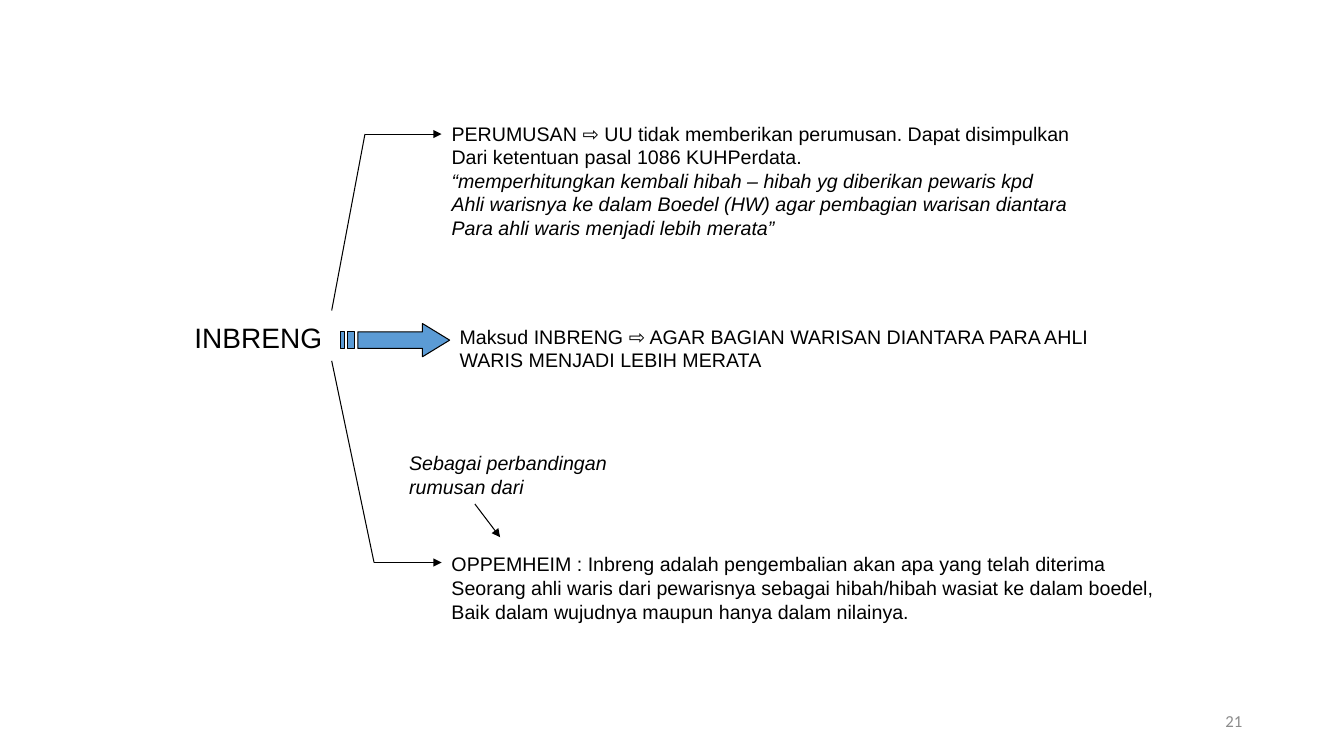
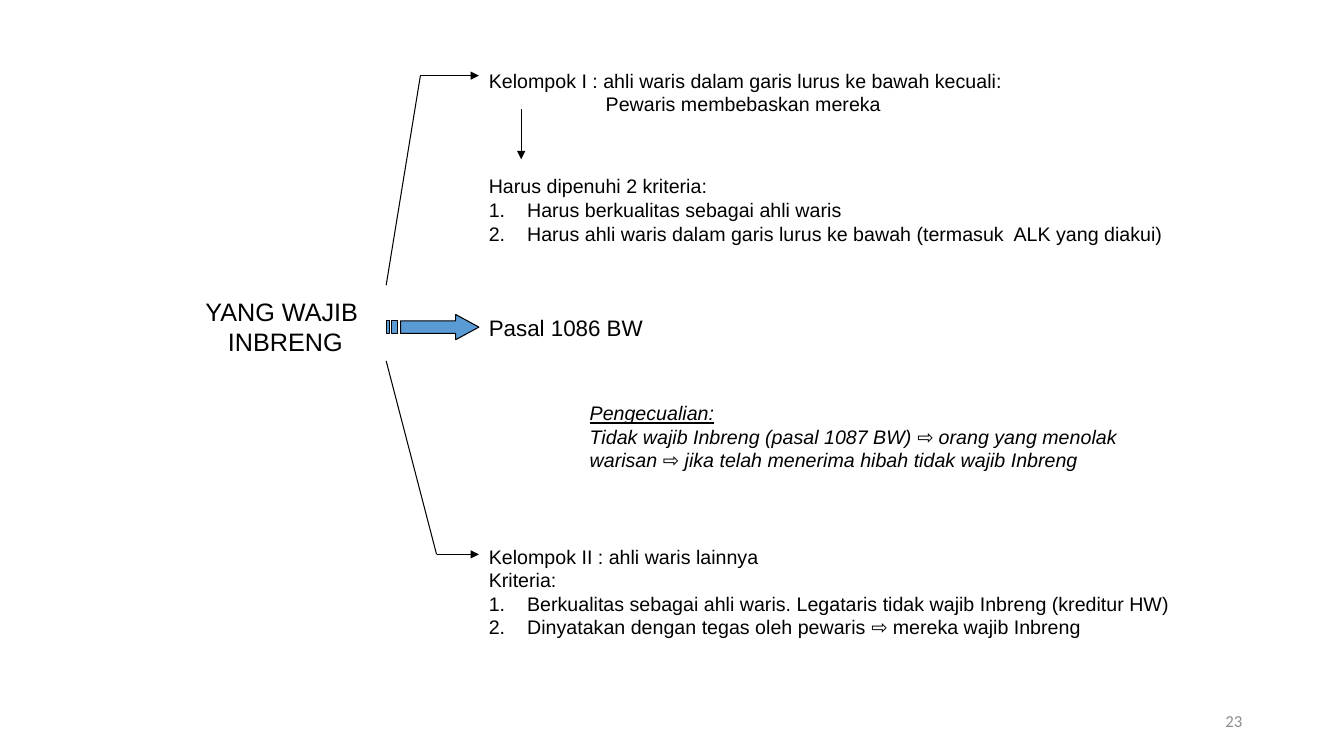
from dataclasses import dataclass

import pptx
import pptx.dml.color
import pptx.enum.shapes
import pptx.enum.text
import pptx.oxml
import pptx.oxml.ns
import pptx.util
from pptx.util import Inches

ALIGN = pptx.enum.text.PP_ALIGN


@dataclass(frozen=True)
class Theme:
    ink: str = "000000"
    arrow: str = "5B9BD5"
    muted: str = "8C8C8C"
    font: str = "Arial"
    number_font: str = "Calibri"
    body: int = 14
    point: int = 16
    topic: int = 18
    main_topic: int = 20
    number: int = 12
    line: float = 0.75
    hanging: float = 0.38


THEME = Theme()
ITALIC = {"italic": True}
NUMBERED = {"numbered": True}


def color(code):
    return pptx.dml.color.RGBColor.from_string(code)


def add_xml(parent, tag, **attributes):
    child = pptx.oxml.parse_xml(f"<a:{tag} {pptx.oxml.ns.nsdecls('a')}/>")
    for name, value in attributes.items():
        child.set(name, value)
    parent.append(child)


def write(para, text, size=THEME.body, font=THEME.font, ink=THEME.ink,
          italic=False, underline=False, align=ALIGN.LEFT, indent=0,
          numbered=False):
    """Fill one paragraph with text in the given format."""
    para.alignment = align
    span = para.add_run()
    span.text = text
    span.font.size = pptx.util.Pt(size)
    span.font.name = font
    span.font.color.rgb = color(ink)
    span.font.italic = italic
    span.font.underline = underline
    properties = para._p.get_or_add_pPr()
    if numbered:
        properties.set("marL", str(Inches(THEME.hanging)))
        properties.set("indent", str(-Inches(THEME.hanging)))
        add_xml(properties, "buAutoNum", type="arabicPeriod")
    elif indent:
        properties.set("marL", str(Inches(indent)))


class Diagram:
    """Holds the deck and the slide being drawn."""

    def __init__(self):
        self.deck = pptx.Presentation()
        self.deck.slide_width = Inches(13.33)
        self.deck.slide_height = Inches(7.5)
        self.page = None

    def new_page(self, number):
        self.page = self.deck.slides.add_slide(self.deck.slide_layouts[6])
        self.text(9.42, 6.95, 3, 0.4, number, right_margin=0.1,
                  size=THEME.number, font=THEME.number_font,
                  ink=THEME.muted, align=ALIGN.RIGHT)

    def text(self, left, top, width, height, *lines, right_margin=0, **style):
        """Each line is a string, or a string with its own format."""
        box = self.page.shapes.add_textbox(
            Inches(left), Inches(top), Inches(width), Inches(height))
        frame = box.text_frame
        frame.word_wrap = True
        frame.margin_right = Inches(right_margin)
        frame.vertical_anchor = pptx.enum.text.MSO_ANCHOR.MIDDLE
        for index, line in enumerate(lines):
            para = frame.add_paragraph() if index else frame.paragraphs[0]
            words, own = (line, {}) if isinstance(line, str) else line
            write(para, words, **{**style, **own})

    def line(self, start, end, arrow=False):
        connector = self.page.shapes.add_connector(
            pptx.enum.shapes.MSO_CONNECTOR.STRAIGHT,
            *(Inches(value) for value in (*start, *end)))
        connector.line.color.rgb = color(THEME.ink)
        connector.line.width = pptx.util.Pt(THEME.line)
        if arrow:
            add_xml(connector.line._get_or_add_ln(), "tailEnd",
                    type="triangle")
        add_xml(connector._element.spPr, "effectLst")

    def branch(self, start, corner, end_x):
        """A slanted line that turns into a level arrow."""
        self.line(start, corner)
        self.line(corner, (end_x, corner[1]), arrow=True)

    def striped_arrow(self, left, top, width, height):
        def place(x, y):
            return Inches(left + x * width), Inches(top + y * height)

        def stripe(x1, x2):
            return [(x1, 0.25), (x1, 0.75), (x2, 0.75), (x2, 0.25)]

        head = [(0.75, 0), (0.75, 0.25), (5 / 32, 0.25), (5 / 32, 0.75),
                (0.75, 0.75), (0.75, 1), (1, 0.5)]
        outlines = [[place(*point) for point in outline] for outline in
                    (head, stripe(1 / 16, 1 / 8), stripe(0, 1 / 32))]
        builder = self.page.shapes.build_freeform(*outlines[0][0])
        for index, (first, *rest) in enumerate(outlines):
            if index:
                builder.move_to(*first)
            builder.add_line_segments(rest, close=True)
        shape = builder.convert_to_shape()
        shape.shadow.inherit = False
        shape.fill.solid()
        shape.fill.fore_color.rgb = color(THEME.arrow)
        shape.line.color.rgb = color(THEME.ink)
        shape.line.width = pptx.util.Pt(THEME.line)


def draw_meaning(diagram):
    diagram.new_page("21")
    # Topic and its branches
    diagram.text(1.83, 3.1, 1.5, 0.5, "INBRENG", size=THEME.main_topic)
    diagram.branch((3.29, 3.08), (3.62, 1.33), 4.38)
    diagram.striped_arrow(3.38, 3.21, 1.08, 0.33)
    diagram.branch((3.29, 3.58), (3.71, 5.58), 4.38)
    # Definition
    diagram.text(
        4.38, 1.08, 6.58, 1.42,
        "PERUMUSAN ⇨ UU tidak memberikan perumusan. Dapat disimpulkan",
        "Dari ketentuan pasal 1086 KUHPerdata.",
        ("“memperhitungkan kembali hibah – hibah yg diberikan pewaris kpd",
         ITALIC),
        ("Ahli warisnya ke dalam Boedel (HW) agar pembagian warisan diantara",
         ITALIC),
        ("Para ahli waris menjadi lebih merata”", ITALIC))
    # Purpose
    diagram.text(
        4.46, 3.08, 6.58, 0.75,
        "Maksud INBRENG ⇨ AGAR BAGIAN WARISAN DIANTARA PARA AHLI",
        "WARIS MENJADI LEBIH MERATA")
    # Comparison
    diagram.text(3.96, 4.42, 2.17, 0.58, "Sebagai perbandingan",
                 "rumusan dari", italic=True)
    diagram.line((4.71, 5), (4.96, 5.33), arrow=True)
    diagram.text(
        4.38, 5.33, 7.17, 1,
        "OPPEMHEIM : Inbreng adalah pengembalian akan apa yang telah diterima",
        "Seorang ahli waris dari pewarisnya sebagai hibah/hibah wasiat "
        "ke dalam boedel,",
        "Baik dalam wujudnya maupun hanya dalam nilainya.")


def draw_obligation(diagram):
    diagram.new_page("23")
    # Topic and its branches
    diagram.text(1.83, 2.86, 2, 0.75, "YANG WAJIB ", "INBRENG",
                 right_margin=0.1, size=THEME.topic, align=ALIGN.CENTER)
    diagram.branch((3.83, 2.83), (4.17, 0.75), 4.75)
    diagram.striped_arrow(3.83, 3.12, 0.92, 0.25)
    diagram.branch((3.83, 3.58), (4.33, 5.5), 4.75)
    # First group
    diagram.text(
        4.75, 0.58, 6, 0.67,
        "Kelompok I : ahli waris dalam garis lurus ke bawah kecuali:",
        ("Pewaris membebaskan mereka", {"indent": 1.16}))
    diagram.line((5.17, 1.08), (5.17, 1.58), arrow=True)
    diagram.text(
        4.75, 1.58, 6.83, 1,
        "Harus dipenuhi 2 kriteria:",
        ("Harus berkualitas sebagai ahli waris", NUMBERED),
        ("Harus ahli waris dalam garis lurus ke bawah "
         "(termasuk  ALK yang diakui)", NUMBERED))
    # Article and exception
    diagram.text(4.75, 3, 1.83, 0.5, "Pasal 1086 BW", size=THEME.point)
    diagram.text(
        5.75, 3.83, 5.42, 1,
        ("Pengecualian:", {"underline": True}),
        "Tidak wajib Inbreng (pasal 1087 BW) ⇨ orang yang menolak",
        "warisan ⇨ jika telah menerima hibah tidak wajib Inbreng",
        italic=True)
    # Second group
    diagram.text(
        4.75, 5.33, 6.92, 1.08,
        "Kelompok II : ahli waris lainnya",
        "Kriteria:",
        ("Berkualitas sebagai ahli waris. Legataris tidak wajib Inbreng "
         "(kreditur HW)", NUMBERED),
        ("Dinyatakan dengan tegas oleh pewaris ⇨ mereka wajib Inbreng",
         NUMBERED))


def main():
    diagram = Diagram()
    draw_meaning(diagram)
    draw_obligation(diagram)
    diagram.deck.save("out.pptx")


if __name__ == "__main__":
    main()
